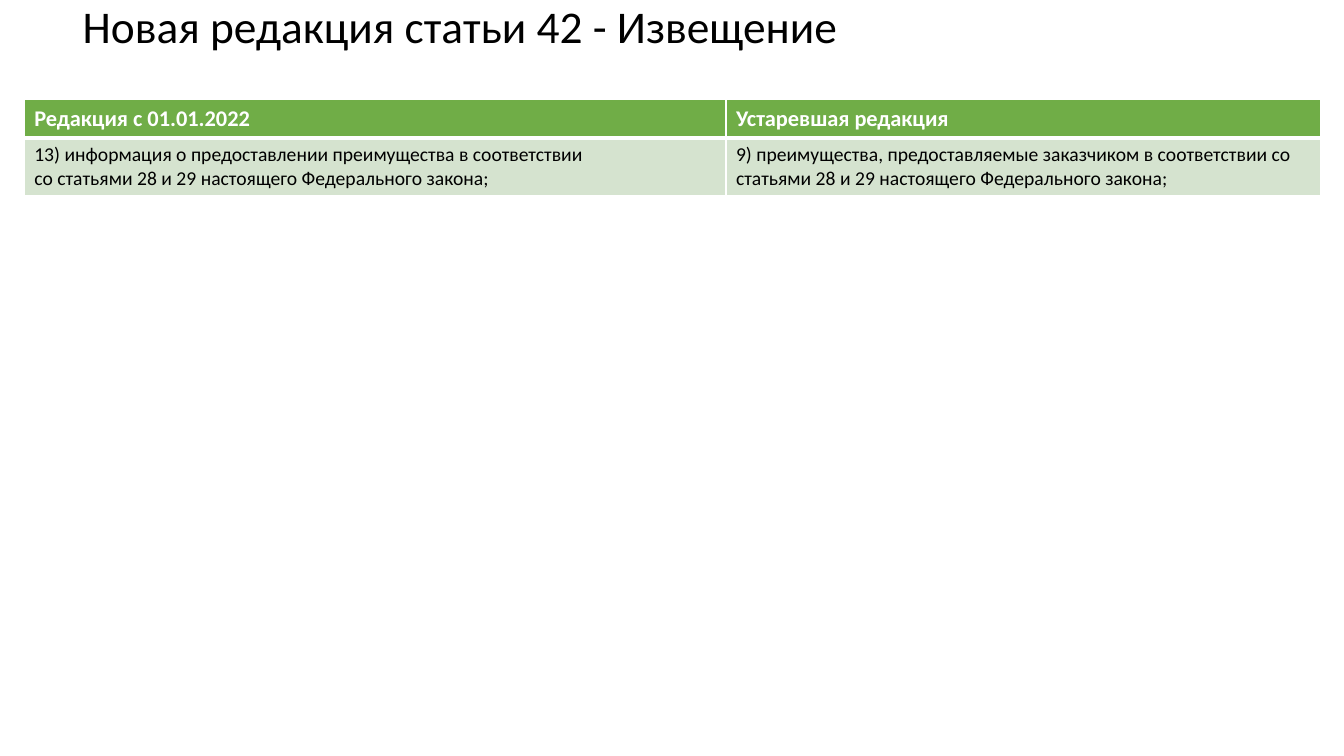
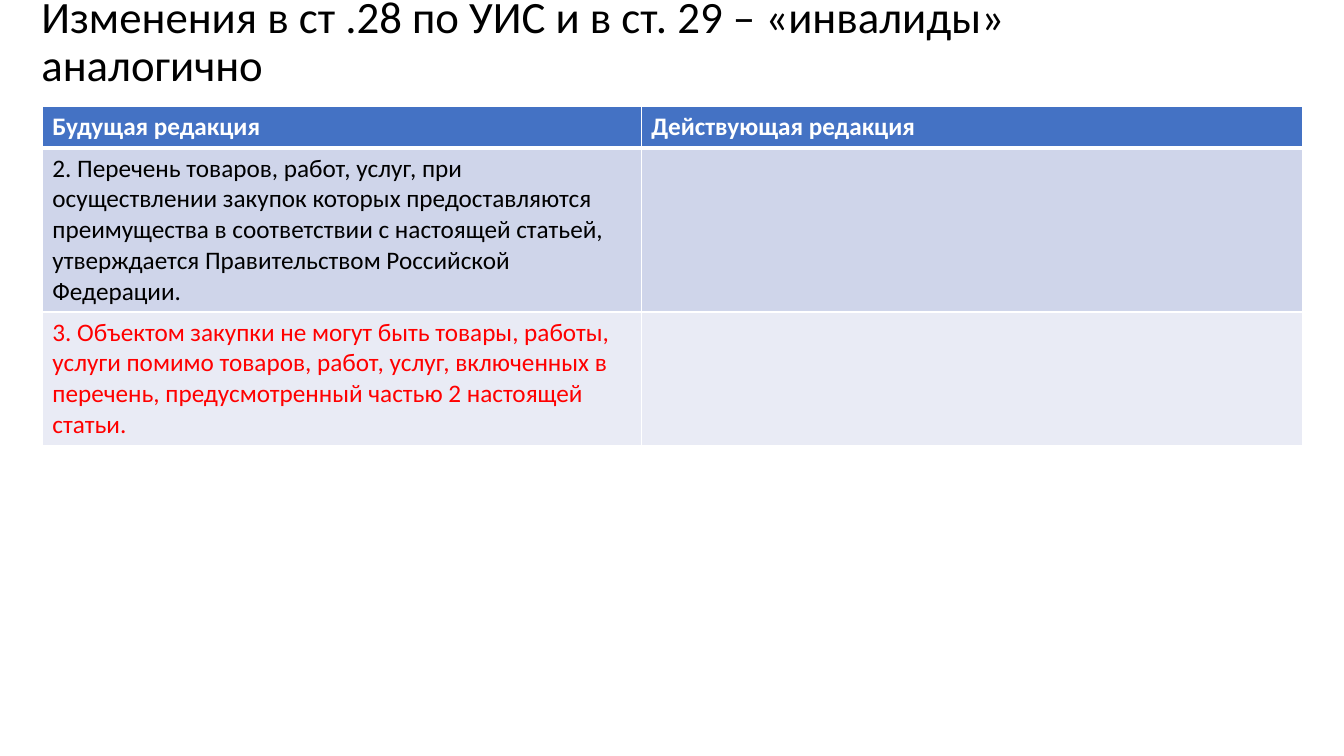
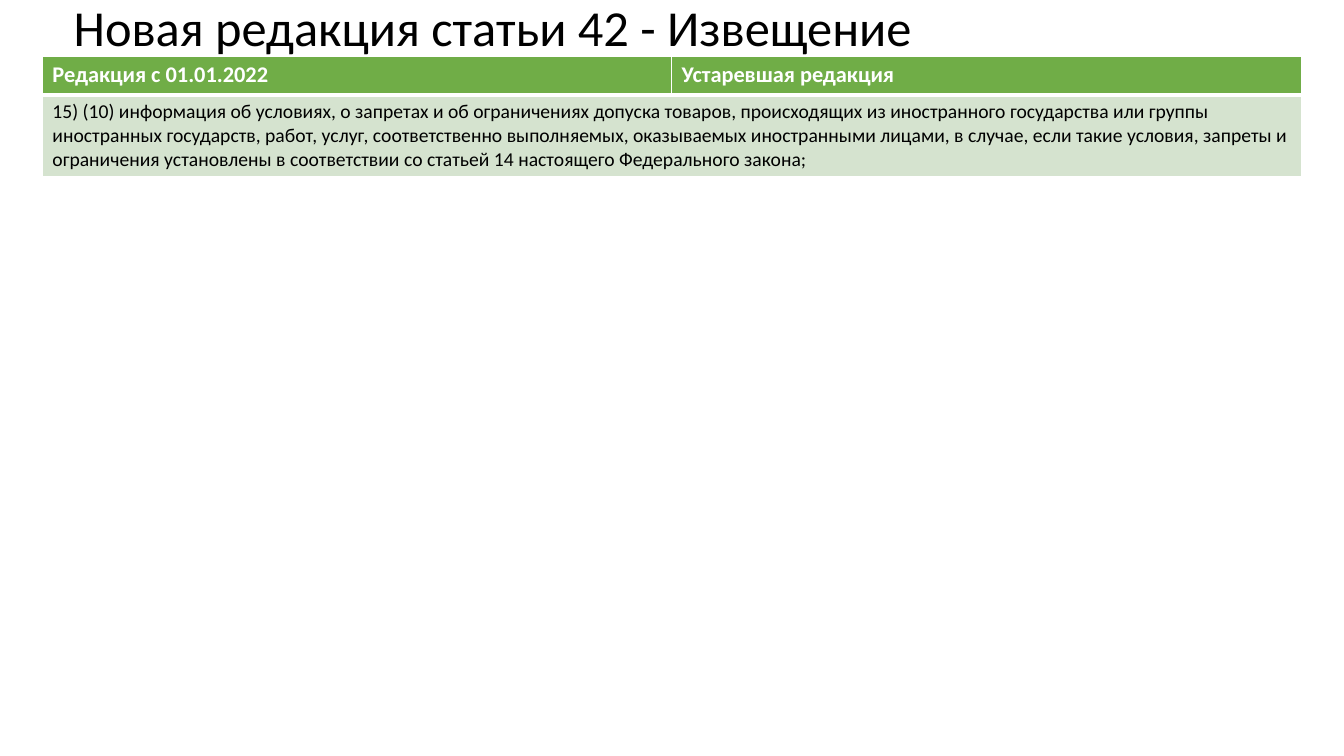
from dataclasses import dataclass
from typing import Optional

from lxml.etree import SubElement
from pptx import Presentation
from pptx.dml.color import RGBColor
from pptx.enum.text import MSO_ANCHOR, MSO_AUTO_SIZE, PP_ALIGN
from pptx.oxml.ns import qn
from pptx.slide import Slide
from pptx.table import _Cell
from pptx.text.text import TextFrame
from pptx.util import Emu, Pt

EMU_PER_PX = 9144  # 100 px to the inch
FONT = "Calibri"
TITLE_ONLY = 5
COLORS = {
    "black": "000000",
    "white": "FFFFFF",
    "red": "FF0000",
    "green": "70AD47",
    "pale_green": "D5E3CF",
    "blue": "4472C4",
    "mid_blue": "CFD5EA",
    "pale_blue": "E9EBF5",
}
THIN, THICK = 1, 3


@dataclass(frozen=True)
class Box:
    left: int
    top: int
    width: int
    height: int


@dataclass(frozen=True)
class Row:
    """One table row; None in cells extends the cell to its left."""
    cells: tuple[Optional[str], ...]
    height: int
    fill: str
    size: int
    color: str = "black"
    bold: bool = False


@dataclass(frozen=True)
class Comparison:
    title: str
    title_box: Box
    title_size: float
    table_left: int
    table_top: int
    columns: tuple[int, ...]
    rows: tuple[Row, ...]


ARTICLE_42 = "Новая редакция статьи 42 - Извещение"
ARTICLE_42_HEADER = Row(("Редакция с 01.01.2022", "Устаревшая редакция"),
                        38, "green", 16, "white", True)

COMPARISONS = (
    Comparison(
        ARTICLE_42, Box(72, 7, 1150, 44), 32.4, 24, 99, (696, 590),
        (
            ARTICLE_42_HEADER,
            Row((
                "13) информация о предоставлении преимущества в соответствии\n"
                "со статьями 28 и 29 настоящего Федерального закона;",
                "9) преимущества, предоставляемые заказчиком в соответствии со "
                "статьями 28 и 29 настоящего Федерального закона;",
            ), 57, "pale_green", 14),
        ),
    ),
    Comparison(
        "Изменения в ст .28 по УИС и в ст. 29 – «инвалиды» аналогично",
        Box(31, 11, 1200, 63), 32, 42, 106, (594, 656),
        (
            Row(("Будущая редакция", "Действующая редакция"),
                41, "blue", 18, "white", True),
            Row((
                "2. Перечень товаров, работ, услуг, при осуществлении закупок "
                "которых предоставляются преимущества в соответствии с настоящей "
                "статьей, утверждается Правительством Российской Федерации.",
                "",
            ), 162, "mid_blue", 18),
            Row((
                "3. Объектом закупки не могут быть товары, работы, услуги помимо "
                "товаров, работ, услуг, включенных в перечень, предусмотренный "
                "частью 2 настоящей статьи.",
                "",
            ), 132, "pale_blue", 18, "red"),
        ),
    ),
    Comparison(
        ARTICLE_42, Box(63, -4, 1150, 67), 36, 42, 56, (624, 625),
        (
            ARTICLE_42_HEADER,
            Row((
                "15) (10) информация об условиях, о запретах и об ограничениях "
                "допуска товаров, происходящих из иностранного государства или "
                "группы иностранных государств, работ, услуг, соответственно "
                "выполняемых, оказываемых иностранными лицами, в случае, если "
                "такие условия, запреты и ограничения установлены в соответствии "
                "со статьей 14 настоящего Федерального закона;",
                None,
            ), 80, "pale_green", 14),
        ),
    ),
)


def px(length: int) -> Emu:
    return Emu(length * EMU_PER_PX)


def rgb(name: str) -> RGBColor:
    return RGBColor.from_string(COLORS[name])


def write_text(frame: TextFrame, text: str, *, size: float, color: str = "black",
               bold: bool = False, line_spacing: float = 1.0) -> None:
    frame.text = text
    for paragraph in frame.paragraphs:
        paragraph.alignment = PP_ALIGN.LEFT
        paragraph.line_spacing = line_spacing
        for run in paragraph.runs:
            run.font.name = FONT
            run.font.size = Pt(size)
            run.font.bold = bold
            run.font.color.rgb = rgb(color)


def set_borders(cell: _Cell, *, top: int, bottom: int) -> None:
    """Draw white borders; must run before the cell is filled."""
    properties = cell._tc.get_or_add_tcPr()
    for tag, width in (("lnL", THIN), ("lnR", THIN), ("lnT", top), ("lnB", bottom)):
        line = SubElement(properties, qn(f"a:{tag}"), w=str(Pt(width)))
        fill = SubElement(line, qn("a:solidFill"))
        SubElement(fill, qn("a:srgbClr"), val=COLORS["white"])


def add_title(slide: Slide, comparison: Comparison) -> None:
    title, box = slide.shapes.title, comparison.title_box
    title.left, title.top = px(box.left), px(box.top)
    title.width, title.height = px(box.width), px(box.height)
    frame = title.text_frame
    frame.word_wrap = True
    frame.auto_size = MSO_AUTO_SIZE.NONE
    frame.vertical_anchor = MSO_ANCHOR.MIDDLE
    write_text(frame, comparison.title, size=comparison.title_size, line_spacing=0.9)


def add_comparison_table(slide: Slide, comparison: Comparison) -> None:
    rows, columns = comparison.rows, comparison.columns
    table = slide.shapes.add_table(
        len(rows), len(columns), px(comparison.table_left), px(comparison.table_top),
        px(sum(columns)), px(sum(row.height for row in rows))).table
    table.horz_banding = False
    for column, width in zip(table.columns, columns):
        column.width = px(width)
    for r, row in enumerate(rows):
        table.rows[r].height = px(row.height)
        for c, text in enumerate(row.cells):
            cell = table.cell(r, c)
            set_borders(cell, top=THICK if r == 1 else THIN,
                        bottom=THICK if r == 0 else THIN)
            cell.fill.solid()
            cell.fill.fore_color.rgb = rgb(row.fill)
            if text is None:
                table.cell(r, c - 1).merge(cell)
            elif text:
                write_text(cell.text_frame, text, size=row.size,
                           color=row.color, bold=row.bold)


def main() -> None:
    deck = Presentation()
    deck.slide_width, deck.slide_height = px(1333), px(750)
    for comparison in COMPARISONS:
        slide = deck.slides.add_slide(deck.slide_layouts[TITLE_ONLY])
        add_title(slide, comparison)
        add_comparison_table(slide, comparison)
    deck.save("out.pptx")


if __name__ == "__main__":
    main()
